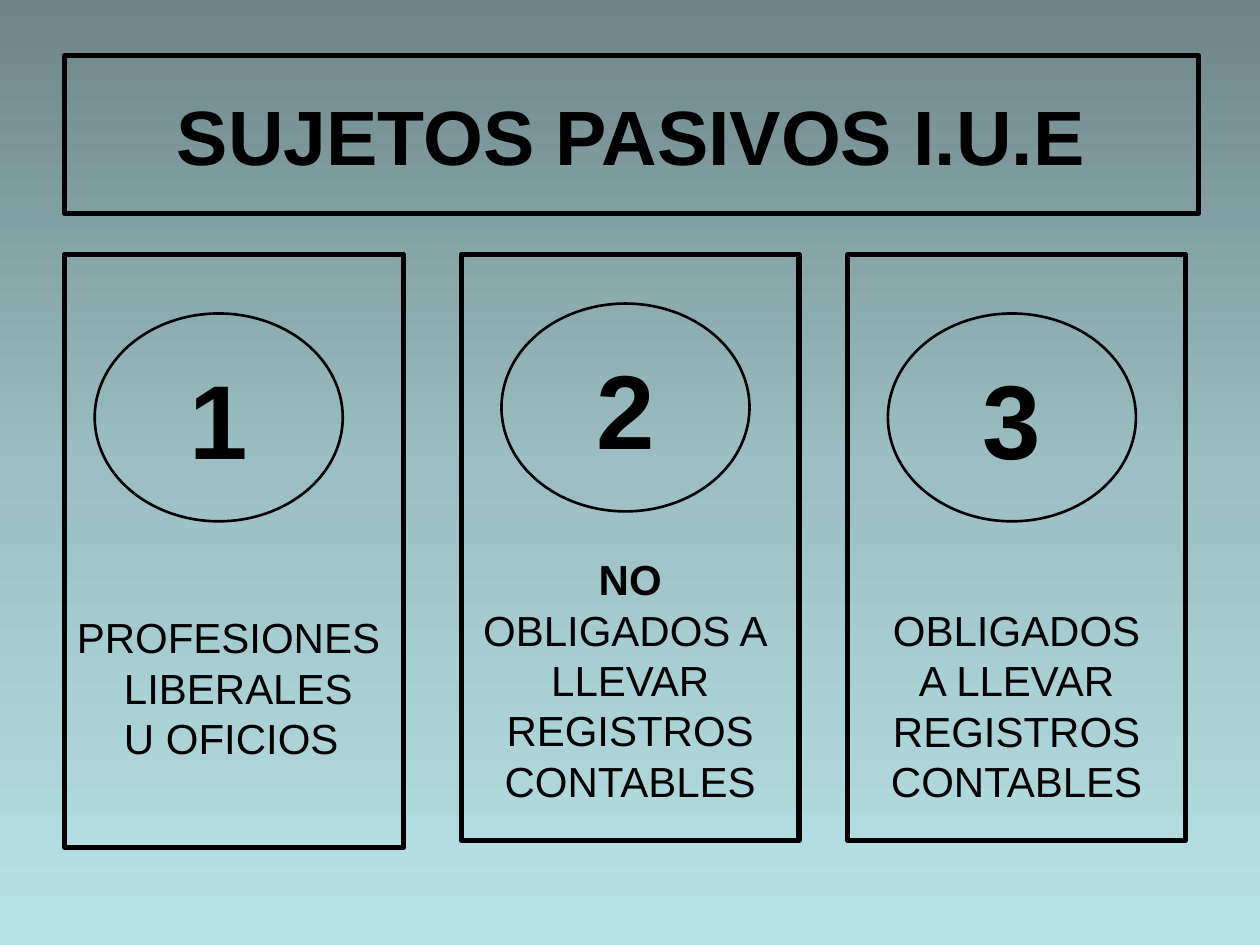
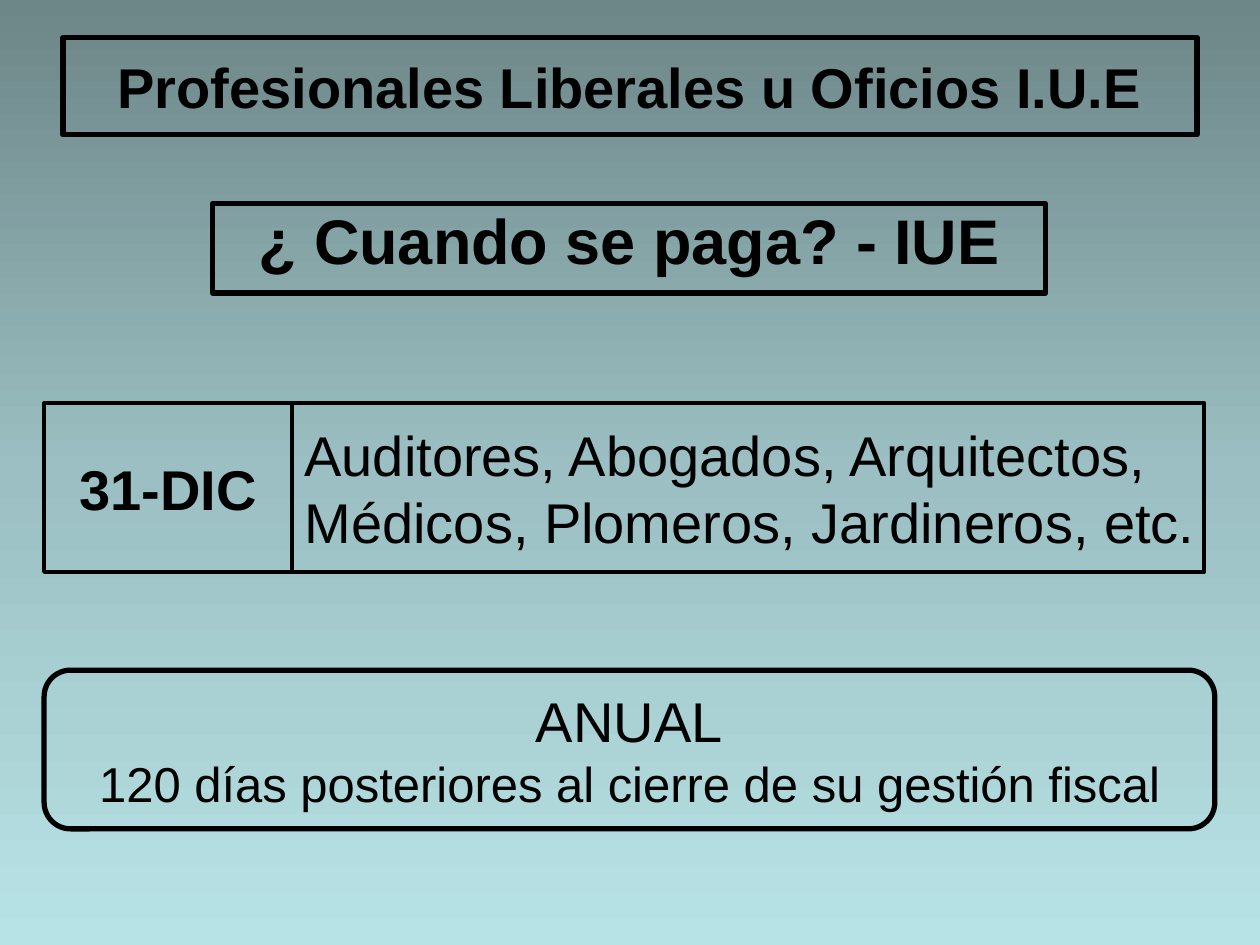
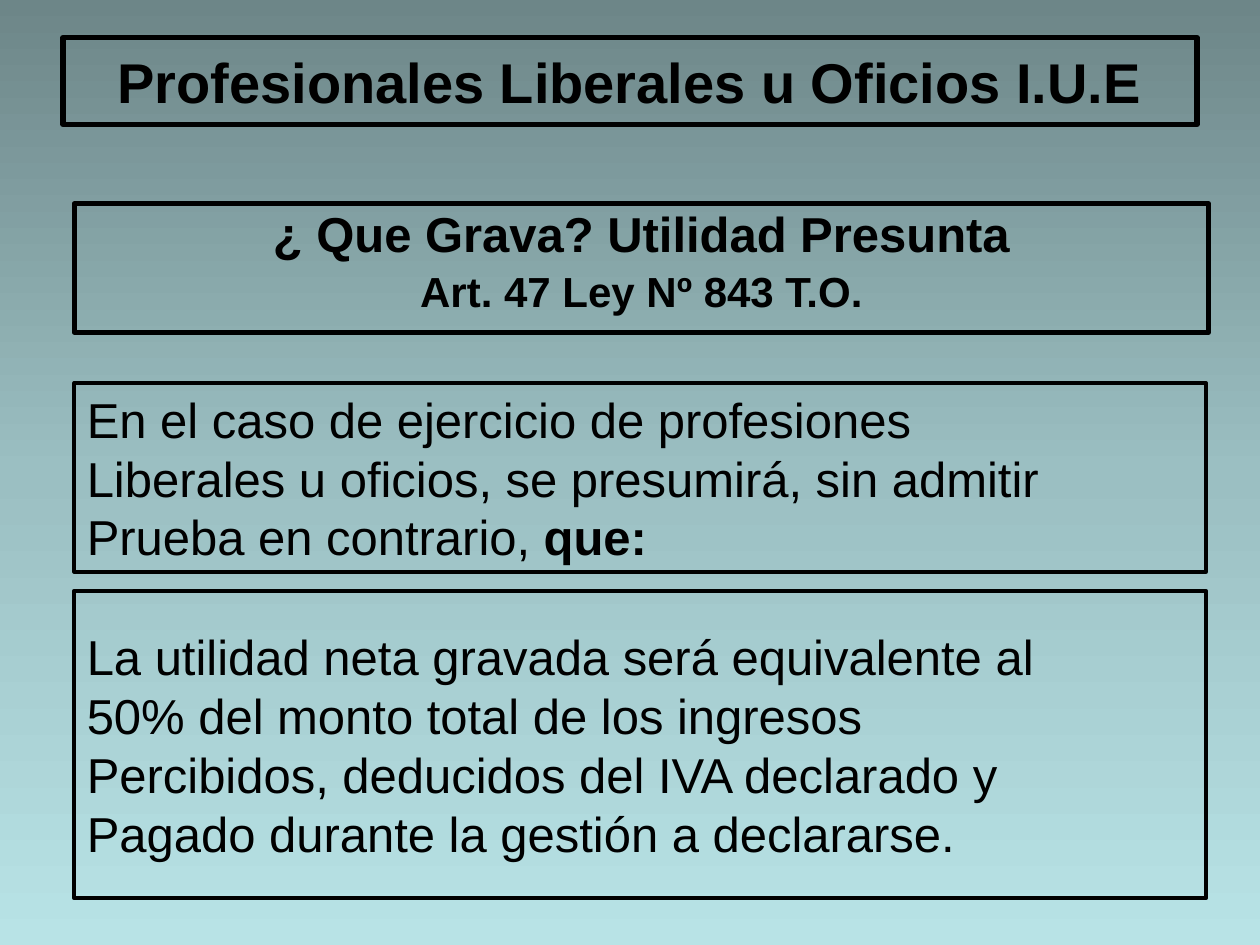
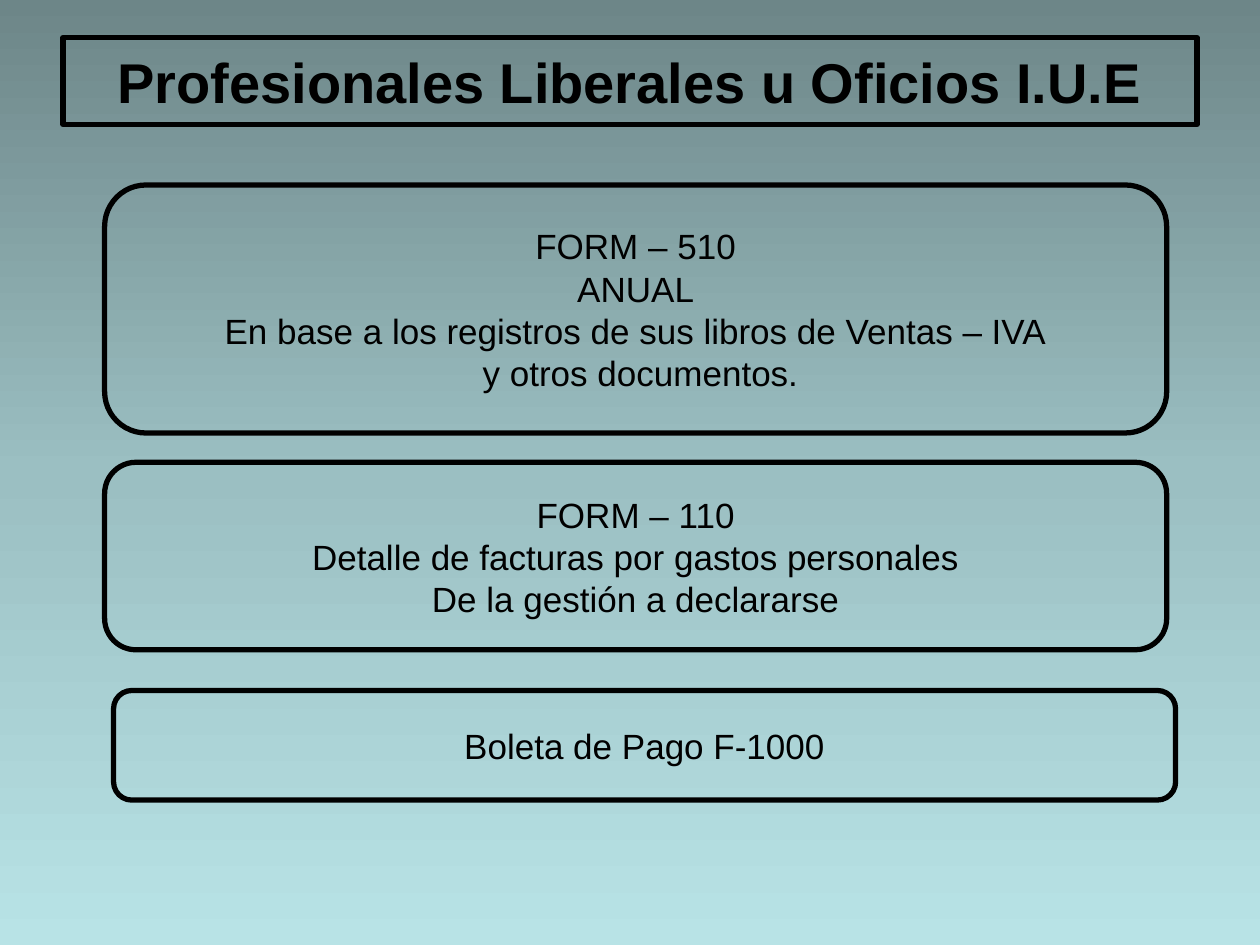
from copy import deepcopy

from pptx import Presentation
from pptx.dml.color import RGBColor as Rgb
from pptx.enum.shapes import MSO_SHAPE as Kind
from pptx.enum.text import MSO_ANCHOR as Anchor, PP_ALIGN as Align
from pptx.oxml.ns import qn
from pptx.util import Cm, Pt

INK = {"text": "000000", "top": "6D8688", "mid": "9BBFC2", "low": "B8E3E6"}
FONT = "Arial"
HEAD = "Profesionales Liberales u Oficios I.U.E"
HANG = Cm(0.95)


def tint(name):
    return Rgb.from_string(INK[name])


def paint(master):
    fill = master.background.fill
    fill.gradient()
    fill.gradient_angle = 270
    first = master.element.find(".//" + qn("a:gs"))
    first.addnext(deepcopy(first))
    for stop, name, place in zip(fill.gradient_stops, ("top", "mid", "low"), (0, 0.5, 1)):
        stop.color.rgb = tint(name)
        stop.position = place


def frame(slide, area, line=3, kind=Kind.RECTANGLE):
    shape = slide.shapes.add_shape(kind, *map(Cm, area))
    shape.element.remove(shape.element.find(qn("p:style")))
    shape.shadow.inherit = False
    shape.fill.background()
    shape.line.color.rgb = tint("text")
    shape.line.width = Pt(line)
    return shape


def write(shape, rows, size, bold=False, align=Align.CENTER, anchor=Anchor.MIDDLE,
          wrap=False, top=None, hang=False, pitch=None):
    body = shape.text_frame
    body.word_wrap = wrap
    body.vertical_anchor = anchor
    if top is not None:
        body.margin_top = Cm(top)
    for i, row in enumerate(rows):
        text, points, heavy = row if isinstance(row, tuple) else (row, size, bold)
        para = body.paragraphs[0] if i == 0 else body.add_paragraph()
        para.alignment = align
        if hang:
            props = para._p.get_or_add_pPr()
            props.set("marL", str(HANG))
            props.set("indent", str(-HANG))
            para.space_before = Pt(points * 0.2)
        if pitch:
            para.line_spacing = pitch
        font = para.font
        font.name, font.size, font.bold = FONT, Pt(points), heavy
        font.color.rgb = tint("text")
        para.add_run().text = text
    return body


def title(slide, text=HEAD, area=(1.27, 0.76, 22.86, 1.75), size=32):
    write(frame(slide, area), [text], size, bold=True, wrap=True)


def topic(slide, area, rows, size):
    write(frame(slide, area), rows, size, bold=True, anchor=Anchor.TOP,
          wrap=True, hang=True, pitch=0.9)


def panel(slide, area, rows, size, bold=False, align=Align.LEFT):
    return write(frame(slide, area, 2.25), rows, size, bold, align)


def pill(slide, area, rows, size):
    write(frame(slide, area, kind=Kind.ROUNDED_RECTANGLE), rows, size)


def card(slide, area, mark, shift, rows, **style):
    left, top = area[:2]
    write(frame(slide, area), rows, 24, **style)
    disc = frame(slide, (left + shift[0], top + shift[1], 5, 4.19), 1.5, Kind.OVAL)
    write(disc, [mark], 60, bold=True)


def payers(slide):
    title(slide, "SUJETOS PASIVOS I.U.E", (1.3, 1.12, 22.86, 3.18), 44)
    card(slide, (1.3, 5.13, 6.83, 11.96), "1", (0.61, 1.19),
         ["PROFESIONES LIBERALES U OFICIOS"], align=Align.LEFT,
         anchor=Anchor.TOP, wrap=True, top=7.2, hang=True)
    ends = ["REGISTROS", "CONTABLES"]
    card(slide, (9.3, 5.13, 6.81, 11.81), "2", (0.81, 0.99),
         [("NO", 24, True), "OBLIGADOS A ", "LLEVAR", *ends], top=5.46)
    card(slide, (17.09, 5.13, 6.81, 11.81), "3", (0.81, 1.19),
         ["OBLIGADOS", "A LLEVAR", *ends], top=6.48)


def dates(slide):
    topic(slide, (4.29, 4.11, 16.79, 1.8), ["¿ Cuando se paga? - IUE"], 36)
    title(slide, area=(1.27, 0.76, 22.86, 1.96))
    panel(slide, (5.89, 8.13, 18.39, 3.4),
          ["Auditores, Abogados, Arquitectos,", "Médicos, Plomeros, Jardineros, etc."], 32)
    panel(slide, (0.89, 8.13, 5, 3.4), ["31-DIC"], 32, True, Align.CENTER)
    pill(slide, (0.89, 13.51, 23.6, 3.2),
         ["ANUAL", ("120 días posteriores al cierre de su gestión fiscal", 28, False)], 32)


def base(slide):
    topic(slide, (1.5, 4.11, 22.86, 2.59),
          ["¿ Que Grava? Utilidad Presunta", ("Art. 47 Ley Nº 843 T.O.", 24, True)], 28)
    title(slide)
    body = panel(slide, (1.5, 7.72, 22.81, 3.81),
                 ["En el caso de ejercicio de profesiones",
                  "Liberales u oficios, se presumirá, sin admitir",
                  "Prueba en contrario, "], 28)
    run = body.paragraphs[-1].add_run()
    run.text = "que:"
    run.font.bold = True
    panel(slide, (1.5, 11.91, 22.81, 6.2),
          ["La utilidad neta gravada será equivalente al",
           "50% del monto total de los ingresos",
           "Percibidos, deducidos del IVA declarado y",
           "Pagado durante la gestión a declararse."], 28)


def forms(slide):
    title(slide)
    pill(slide, (2.11, 3.73, 21.41, 5),
         ["FORM – 510", "ANUAL", "En base a los registros de sus libros de Ventas – IVA",
          " y otros documentos."], 20)
    pill(slide, (2.11, 9.32, 21.41, 3.78),
         ["FORM – 110", "Detalle de facturas por gastos personales",
          "De la gestión a declararse"], 20)
    pill(slide, (2.29, 13.92, 21.41, 2.21), ["Boleta de Pago F-1000"], 20)


def main():
    deck = Presentation()
    deck.slide_width, deck.slide_height = Cm(25.4), Cm(19.05)
    paint(deck.slide_master)
    for build in (payers, dates, base, forms):
        build(deck.slides.add_slide(deck.slide_layouts[6]))
    deck.save("out.pptx")


if __name__ == "__main__":
    main()
